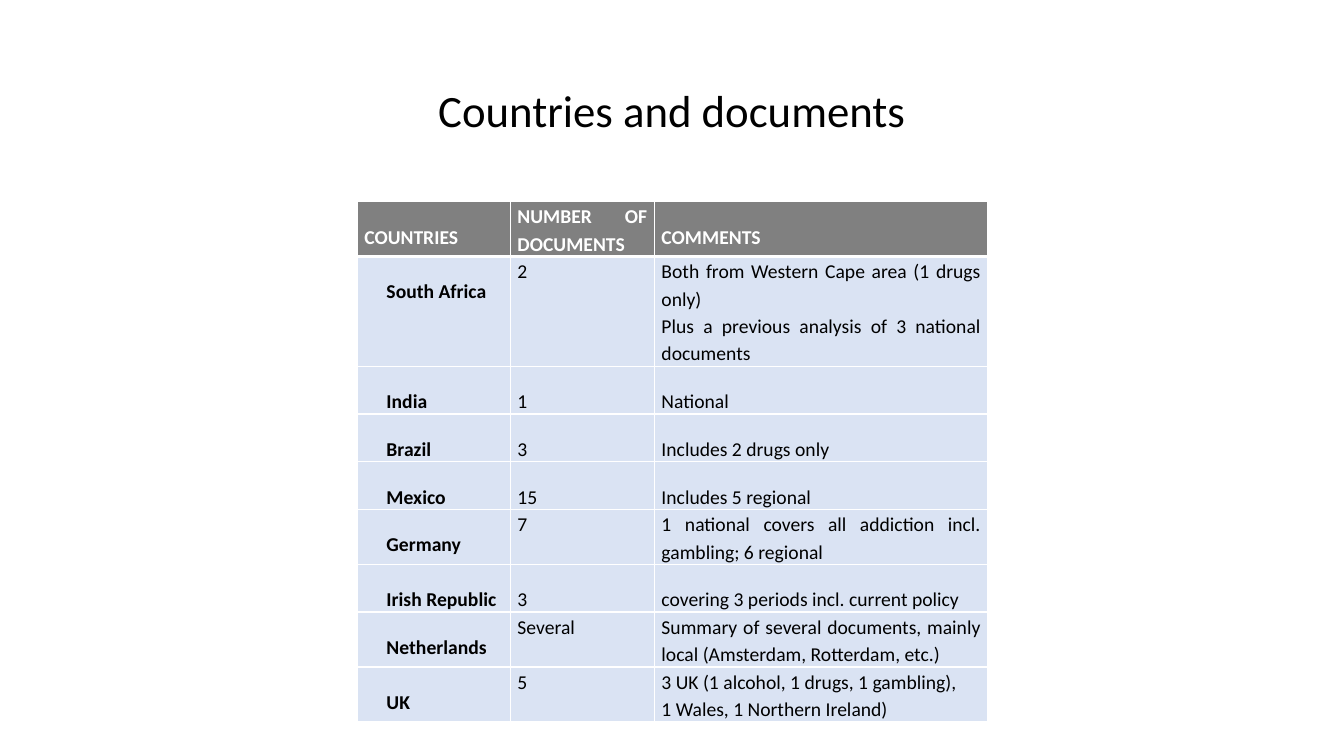
from lxml import etree
from pptx import Presentation
from pptx.dml.color import RGBColor
from pptx.enum.text import MSO_ANCHOR, PP_ALIGN
from pptx.oxml.ns import qn
from pptx.util import Cm, Pt

CENTER, JUSTIFY = PP_ALIGN.CENTER, PP_ALIGN.JUSTIFY
TOP, MIDDLE = MSO_ANCHOR.TOP, MSO_ANCHOR.MIDDLE
FONT = "Calibri"
WHITE, BLACK, GRAY, BLUE = "FFFFFF", "000000", "808080", "DAE3F3"
LOOSE, TIGHT = 2.0, 1.15
WIDTHS = (3.86, 3.63, 8.41)
HEADS = ("COUNTRIES", "NUMBER OF DOCUMENTS", "COMMENTS")
# Country, number, comments, lines of comment text
ROWS = (
    ("South Africa", "2", "Both from Western Cape area (1 drugs only)\n"
     "Plus a previous analysis of 3 national documents", 4),
    ("India", "1", "National", 1),
    ("Brazil", "3", "Includes 2 drugs only", 1),
    ("Mexico", "15", "Includes 5 regional", 1),
    ("Germany", "7",
     "1 national covers all addiction incl. gambling; 6 regional", 2),
    ("Irish Republic", "3", "covering 3 periods incl. current policy", 1),
    ("Netherlands", "Several",
     "Summary of several documents, mainly local (Amsterdam, Rotterdam, etc.)",
     2),
    ("UK", "5", "3 UK (1 alcohol, 1 drugs, 1 gambling),\n"
     "1 Wales, 1 Northern Ireland)", 2),
)


def color(code):
    return RGBColor.from_string(code)


def style(para, size, tone, align, gap, bold=False):
    para.alignment = align
    para.line_spacing = gap
    font = para.font
    font.name, font.size, font.bold = FONT, Pt(size), bold
    font.color.rgb = color(tone)


def add_title(slide, text):
    title = slide.shapes.title
    title.left, title.top = Cm(2.33), Cm(1.01)
    title.width, title.height = Cm(29.21), Cm(3.68)
    frame = title.text_frame
    frame.text = text
    frame.vertical_anchor = MIDDLE
    style(frame.paragraphs[0], 32, BLACK, CENTER, 0.9)


def border(cell, top, bottom):
    props = cell._tc.get_or_add_tcPr()
    sides = (("L", 1), ("R", 1), ("T", top), ("B", bottom))
    for spot, (side, width) in enumerate(sides):
        line = etree.Element(qn(f"a:ln{side}"), w=str(Pt(width)))
        fill = etree.SubElement(line, qn("a:solidFill"))
        etree.SubElement(fill, qn("a:srgbClr"), val=WHITE)
        props.insert(spot, line)


def fill_cell(cell, text, back, tone, gap, bold, left=0.18):
    cell.text = text
    cell.margin_left, cell.margin_right = Cm(left), Cm(0.18)
    cell.margin_top = cell.margin_bottom = 0
    cell.vertical_anchor = TOP
    cell.fill.solid()
    cell.fill.fore_color.rgb = color(back)
    for para in cell.text_frame.paragraphs:
        style(para, 14, tone, JUSTIFY, gap, bold)


def add_grid(slide):
    heights = [1.38] + [1.2 if row[3] == 1 else 0.69 * row[3] for row in ROWS]
    frame = slide.shapes.add_table(
        len(heights), len(WIDTHS), Cm(9), Cm(5.08),
        Cm(sum(WIDTHS)), Cm(sum(heights)))
    table = frame.table
    table.horz_banding = False
    for column, width in zip(table.columns, WIDTHS):
        column.width = Cm(width)
    for row, height in zip(table.rows, heights):
        row.height = Cm(height)

    # Header row
    for col, text in enumerate(HEADS):
        cell = table.cell(0, col)
        fill_cell(cell, text, GRAY, WHITE, TIGHT if col == 1 else LOOSE, True)
        border(cell, 1, 3)

    # Country rows
    for num, (*texts, lines) in enumerate(ROWS, 1):
        for col, text in enumerate(texts):
            cell = table.cell(num, col)
            first = col == 0
            gap = LOOSE if first or lines == 1 else TIGHT
            fill_cell(cell, text, BLUE, BLACK, gap, first,
                      0.74 if first else 0.18)
            border(cell, 3 if num == 1 else 1, 1)


def main():
    deck = Presentation()
    deck.slide_width, deck.slide_height = Cm(33.87), Cm(19.05)
    slide = deck.slides.add_slide(deck.slide_layouts[5])
    add_title(slide, "Countries and documents")
    add_grid(slide)
    deck.save("out.pptx")


if __name__ == "__main__":
    main()
